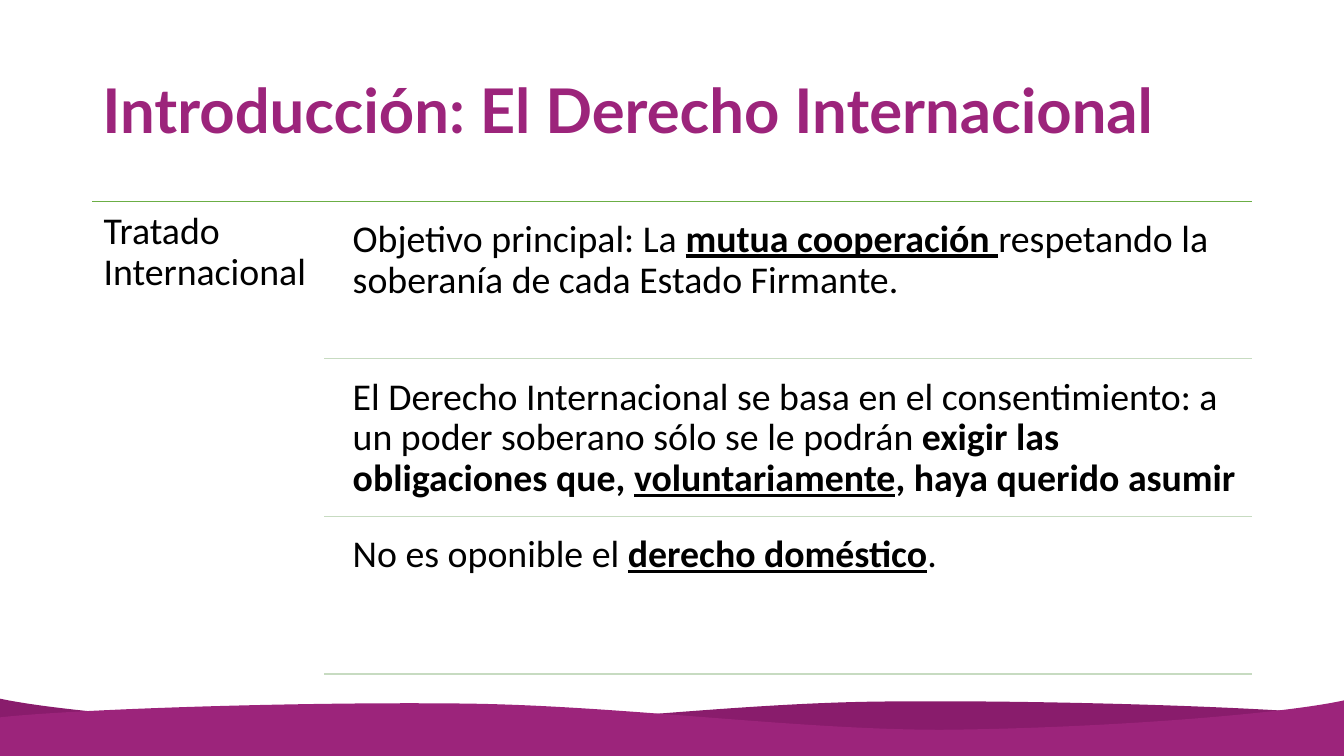
from lxml.etree import SubElement
from pptx import Presentation
from pptx.dml.color import RGBColor
from pptx.enum.shapes import MSO_CONNECTOR as Connector
from pptx.enum.text import MSO_ANCHOR as Anchor
from pptx.oxml.ns import qn
from pptx.util import Cm, Pt

PURPLE = RGBColor(0x9C, 0x24, 0x7B)
DARK_PURPLE = RGBColor(0x89, 0x1C, 0x6C)
GREEN = RGBColor(0x6B, 0xAE, 0x45)
PALE_GREEN = RGBColor(0xC7, 0xDB, 0xC1)
BLACK = RGBColor(0, 0, 0)

WIDTH, HEIGHT = 33.87, 19.05
LEFT, RIGHT = 2.33, 31.54
DETAIL_LEFT, DETAIL_TEXT_LEFT = 8.17, 8.61
TOP, ROW_HEIGHT, ROW_GAP = 5.07, 3.97, 0.19

WAVE = [
    (33.87, 18.03),
    (31.9, 17.81), (26.06, 17.63), (22.1, 17.68),
    (18.16, 17.73), (13.79, 18.34), (10.11, 18.34),
    (6.43, 18.31), (1.73, 17.98), (-0.03, 17.6),
]

POINTS = [
    [("Objetivo principal: La ", ""), ("mutua cooperación ", "bu"),
     ("respetando la soberanía de cada Estado Firmante.", "")],
    [("El Derecho Internacional se basa en el consentimiento: a un poder "
      "soberano sólo se le podrán ", ""),
     ("exigir las obligaciones que, ", "b"), ("voluntariamente", "bu"),
     (", haya querido asumir", "b")],
    [("No es oponible el ", ""), ("derecho doméstico", "bu"), (".", "")],
]


class SlideBuilder:
    def __init__(self, slide):
        self.shapes = slide.shapes

    def wave(self, controls, color):
        crest = [(Cm(x), Cm(y)) for x, y in controls]
        bottom = [(crest[-1][0], Cm(HEIGHT)), (crest[0][0], Cm(HEIGHT))]
        builder = self.shapes.build_freeform(*crest[0])
        builder.add_line_segments(crest[3::3] + bottom, close=True)
        wave = builder.convert_to_shape()
        wave.shadow.inherit = False
        wave.fill.solid()
        wave.fill.fore_color.rgb = color
        wave.line.fill.background()

        segments = list(wave._element.iter(qn("a:lnTo")))
        for index, segment in enumerate(segments[:3]):
            segment.tag = qn("a:cubicBezTo")
            segment.remove(segment[0])
            for x, y in crest[3 * index + 1:3 * index + 4]:
                SubElement(segment, qn("a:pt"),
                           x=str(x - wave.left), y=str(y - wave.top))

    def rule(self, left, y, color):
        rule = self.shapes.add_connector(
            Connector.STRAIGHT, Cm(left), Cm(y), Cm(RIGHT), Cm(y))
        rule.line.color.rgb = color
        rule.line.width = Pt(1)
        SubElement(rule._element.spPr, qn("a:effectLst"))

    def text(self, box, runs, font="Calibri", size=27, color=BLACK,
             inset=0.28, anchor=Anchor.TOP):
        frame = self.shapes.add_textbox(*map(Cm, box)).text_frame
        frame.word_wrap = True
        frame.vertical_anchor = anchor
        frame.margin_left = frame.margin_right = Cm(inset)
        frame.margin_top = frame.margin_bottom = Cm(inset)
        paragraph = frame.paragraphs[0]
        paragraph.line_spacing = 0.9
        for words, style in runs:
            run = paragraph.add_run()
            run.text = words
            run.font.name = font
            run.font.size = Pt(size)
            run.font.color.rgb = color
            run.font.bold = "b" in style
            run.font.underline = "u" in style


def main():
    deck = Presentation()
    deck.slide_width, deck.slide_height = Cm(WIDTH), Cm(HEIGHT)
    builder = SlideBuilder(deck.slides.add_slide(deck.slide_layouts[6]))

    builder.wave(WAVE, DARK_PURPLE)
    builder.wave([(WIDTH - 0.03 - x, y + 0.05) for x, y in WAVE], PURPLE)

    builder.text((LEFT, 1.02, RIGHT - LEFT, 3.68),
                 [("Introducción: El Derecho Internacional", "b")],
                 font="Lato", size=44, color=PURPLE, inset=0.25,
                 anchor=Anchor.MIDDLE)

    builder.rule(LEFT, TOP, GREEN)
    builder.text((LEFT, TOP, DETAIL_LEFT - LEFT, 12.09),
                 [("Tratado Internacional", "")])
    for row, point in enumerate(POINTS):
        row_top = TOP + row * ROW_HEIGHT
        builder.text((DETAIL_TEXT_LEFT, row_top + ROW_GAP,
                      RIGHT - DETAIL_TEXT_LEFT, ROW_HEIGHT - ROW_GAP), point)
        builder.rule(DETAIL_LEFT, row_top + ROW_HEIGHT, PALE_GREEN)

    deck.save("out.pptx")


if __name__ == "__main__":
    main()
